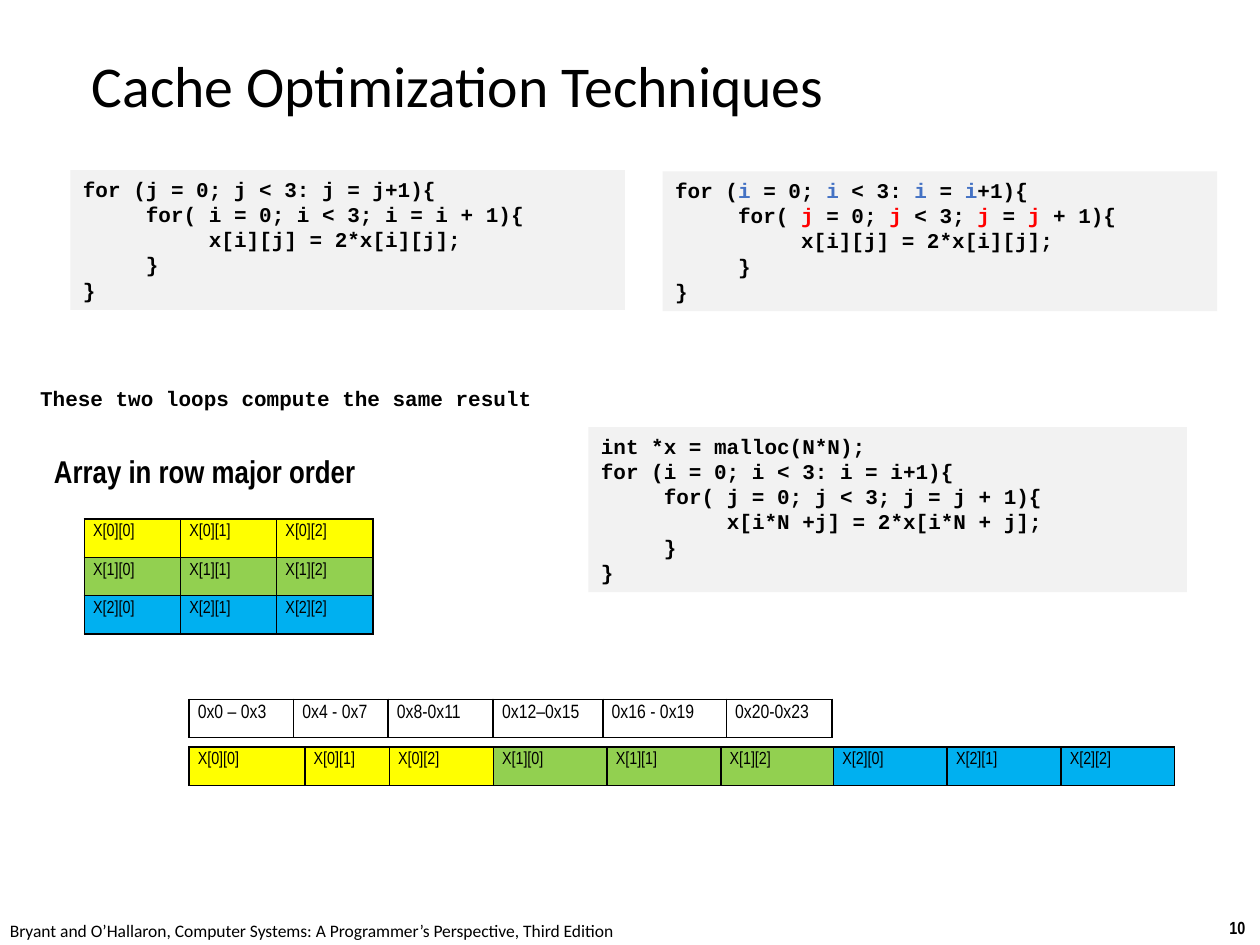
from lxml import etree
from pptx import Presentation
from pptx import util as u
from pptx.dml.color import RGBColor
from pptx.enum import shapes, text
from pptx.oxml import ns

COLUMNS, ROWS = 100, 75
WIDTH, HEIGHT = u.Inches(10), u.Inches(7.5)
BLACK, PANEL, BLUE, RED = "000000", "F2F2F2", "4472C4", "FF0000"
ROW_FILLS = ["FFFF00", "92D050", "00B0F0"]
SANS, NARROW, MONO = "Calibri", "Arial Narrow", "Courier New"

COLUMN_LOOP = [
    "for (j = 0; j < 3: j = j+1){",
    "\tfor( i = 0; i < 3; i = i + 1){",
    "\t\tx[i][j] = 2*x[i][j];",
    "\t}",
    "}",
]
ROW_LOOP = [
    "for (i = 0; i < 3: i = i+1){",
    "\tfor( j = 0; j < 3; j = j + 1){",
    *COLUMN_LOOP[2:],
]
FLAT_LOOP = [
    "int *x = malloc(N*N);",
    *ROW_LOOP[:2],
    "\t\tx[i*N +j] = 2*x[i*N + j];",
    *ROW_LOOP[3:],
]


def rgb(value):
    """Turn a hex string into a colour."""
    return RGBColor.from_string(value)


def grid(column, row, columns, rows):
    """Turn grid units into left, top, width and height."""
    return (
        int(WIDTH * column / COLUMNS),
        int(HEIGHT * row / ROWS),
        int(WIDTH * columns / COLUMNS),
        int(HEIGHT * rows / ROWS),
    )


def add_run(paragraph, content, font=MONO, size=12, bold=True, color=BLACK):
    """Append one formatted run to a paragraph."""
    run = paragraph.add_run()
    run.text = content
    run.font.name = font
    run.font.size = u.Pt(size)
    run.font.bold = bold
    run.font.color.rgb = rgb(color)


def add_label(slide, content, place, wrap=True, anchor=text.MSO_ANCHOR.TOP,
              spacing=None, **style):
    """Add a text box that holds one line."""
    frame = slide.shapes.add_textbox(*grid(*place)).text_frame
    frame.word_wrap = wrap
    frame.vertical_anchor = anchor
    frame.paragraphs[0].line_spacing = spacing
    add_run(frame.paragraphs[0], content, **style)


def add_code(slide, lines, place, highlights=()):
    """Add a code panel; highlights pair a variable and colour with each line."""
    shape = slide.shapes.add_shape(shapes.MSO_SHAPE.RECTANGLE, *grid(*place))
    shape.shadow.inherit = False
    shape.fill.solid()
    shape.fill.fore_color.rgb = rgb(PANEL)
    shape.line.fill.background()
    frame = shape.text_frame
    frame.word_wrap = True
    frame.vertical_anchor = text.MSO_ANCHOR.TOP
    marks = dict(enumerate(highlights))
    for number, line in enumerate(lines):
        paragraph = frame.add_paragraph() if number else frame.paragraphs[0]
        paragraph.alignment = text.PP_ALIGN.LEFT
        variable, color = marks.get(number, (None, BLACK))
        pieces = line.split(variable) if variable else [line]
        for position, piece in enumerate(pieces):
            if position:
                add_run(paragraph, variable, color=color)
            add_run(paragraph, piece)


def add_borders(cell):
    """Draw a thin black line on every side of a cell."""
    properties = cell._tc.get_or_add_tcPr()
    for index, side in enumerate(("a:lnL", "a:lnR", "a:lnT", "a:lnB")):
        line = etree.Element(ns.qn(side), w=str(u.Pt(1)))
        fill = etree.SubElement(line, ns.qn("a:solidFill"))
        etree.SubElement(fill, ns.qn("a:srgbClr"), val=BLACK)
        properties.insert(index, line)


def add_grid_table(slide, rows, fills, column, row, widths, size=10):
    """Add a bordered table with one fill, or none, for each row."""
    place = grid(column, row, sum(widths), 3.04 * len(rows))
    table = slide.shapes.add_table(len(rows), len(widths), *place).table
    table.first_row = table.horz_banding = False
    for table_column, width in zip(table.columns, widths):
        table_column.width = int(WIDTH * width / COLUMNS)
    for row_index, (values, fill) in enumerate(zip(rows, fills)):
        for column_index, value in enumerate(values):
            cell = table.cell(row_index, column_index)
            cell.margin_left = cell.margin_right = u.Inches(0.07)
            cell.margin_top = cell.margin_bottom = u.Inches(0.04)
            if fill:
                cell.fill.solid()
                cell.fill.fore_color.rgb = rgb(fill)
            else:
                cell.fill.background()
            add_run(cell.text_frame.paragraphs[0], value, font=NARROW,
                    size=size, bold=False)
            add_borders(cell)


def main():
    """Build the slide and save it."""
    presentation = Presentation()
    presentation.slide_width, presentation.slide_height = WIDTH, HEIGHT
    slide = presentation.slides.add_slide(presentation.slide_layouts[6])

    add_label(slide, "10", (96.6, 72.3, 3.4, 2.7), wrap=False, font=NARROW, size=10)
    add_label(slide, "Bryant and O’Hallaron, Computer Systems: "
              "A Programmer’s Perspective, Third Edition",
              (-0.2, 72.5, 50.8, 2.7), wrap=False, font=SANS, size=10, bold=False)
    add_label(slide, "Cache Optimization Techniques", (6.3, -0.2, 86.2, 14.5),
              anchor=text.MSO_ANCHOR.MIDDLE, spacing=0.9, font=SANS, size=33,
              bold=False)

    add_code(slide, COLUMN_LOOP, (5.6, 13.5, 44, 11.1))
    add_code(slide, ROW_LOOP, (52.6, 13.6, 44, 11.1), [("i", BLUE), ("j", RED)])
    add_code(slide, FLAT_LOOP, (46.7, 33.9, 47.5, 13.1))
    add_label(slide, "These two loops compute the same result",
              (2.2, 30.1, 48.3, 3))
    add_label(slide, "Array in row major order", (3.3, 35.4, 30.8, 4),
              font=NARROW, size=18)

    matrix = [[f"X[{i}][{j}]" for j in range(3)] for i in range(3)]
    add_grid_table(slide, matrix, ROW_FILLS, 6.7, 41.2, [7.63] * 3)

    starts = [15, 39.15, 66.15]
    value_widths = [[9.2, 6.7, 8.3], [9.03] * 3, [9.03] * 3]
    for values, fill, start, widths in zip(matrix, ROW_FILLS, starts, value_widths):
        add_grid_table(slide, [values], [fill], start, 59.3, widths)

    addresses = [["0x0 – 0x3", "0x4 - 0x7", "0x8-0x11"],
                 ["0x12–0x15", "0x16 - 0x19", "0x20-0x23"]]
    address_widths = [[8.3, 7.5, 8.3], [8.7, 9.8, 8.4]]
    for values, start, widths in zip(addresses, starts, address_widths):
        add_grid_table(slide, [values], [None], start, 55.5, widths, size=11)

    presentation.save("out.pptx")


if __name__ == "__main__":
    main()
